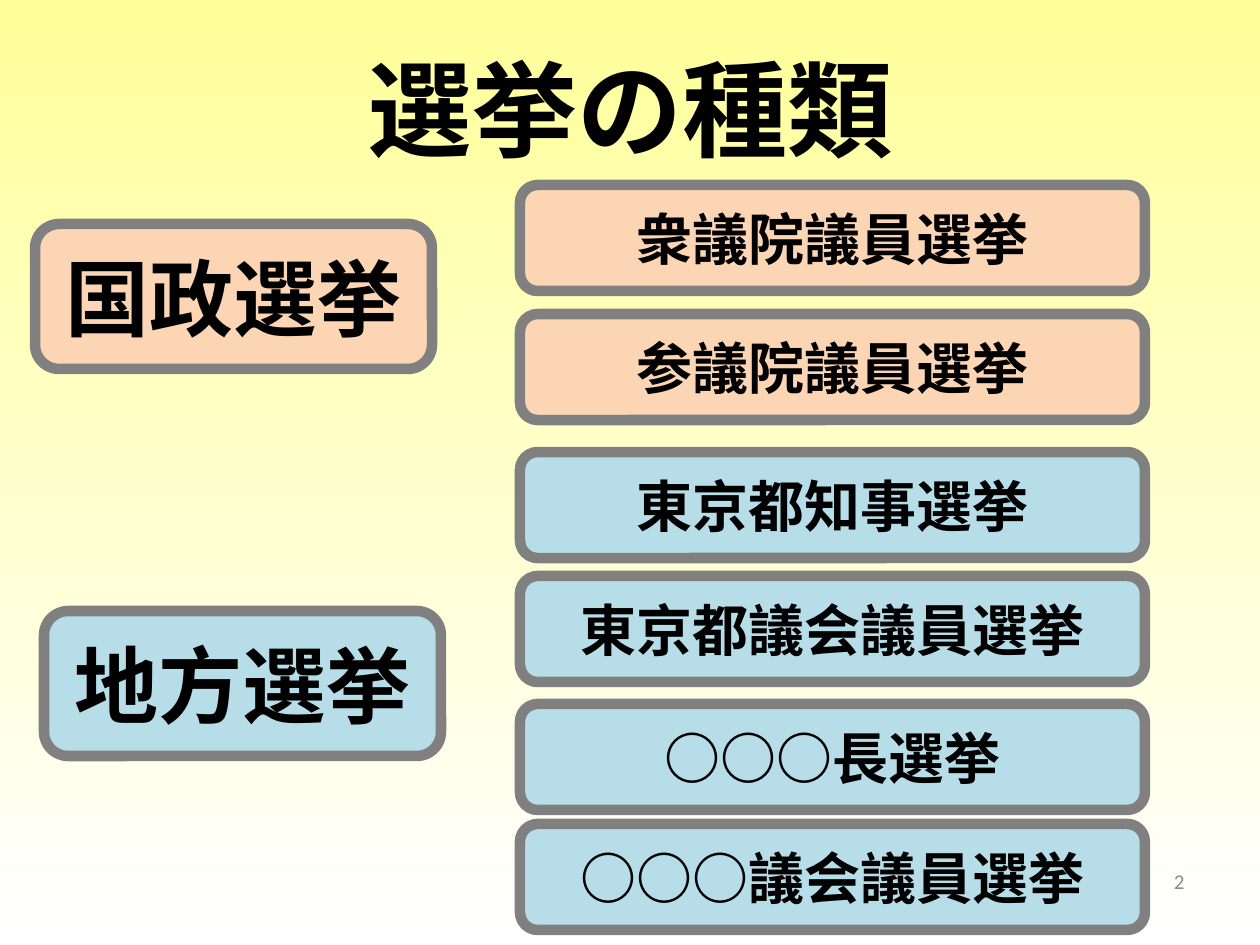
from lxml.etree import SubElement
from pptx import Presentation
from pptx.dml.color import RGBColor
from pptx.enum.shapes import MSO_SHAPE as Shape
from pptx.enum.text import MSO_ANCHOR as Anchor, MSO_AUTO_SIZE as AutoSize, PP_ALIGN as Align
from pptx.oxml.ns import qn
from pptx.util import Pt

PX = 914400 // 126
JAPANESE = "Noto Sans CJK JP"
COLORS = {
    "top": "FFFF99", "bottom": "FFFFFF", "text": "000000", "border": "808080",
    "number": "8C8C8C", "national": "FCD5B5", "local": "B7DEE8",
}

TITLE = "選挙の種類"
PAGE_NUMBER = "2"
# text, left, top, colour
GROUPS = [
    ("国政選挙", 35, 224, "national"),
    ("地方選挙", 44, 611, "local"),
]
# text, top, colour
ELECTIONS = [
    ("衆議院議員選挙", 185, "national"),
    ("参議院議員選挙", 314, "national"),
    ("東京都知事選挙", 452, "local"),
    ("東京都議会議員選挙", 576, "local"),
    ("○○○長選挙", 704, "local"),
    ("○○○議会議員選挙", 824, "local"),
]
GROUP_SIZE = (397, 145)
ELECTION_LEFT, ELECTION_SIZE = 520, (625, 106)


def color(name):
    return RGBColor.from_string(COLORS[name])


def emu(*lengths):
    return [length * PX for length in lengths]


def write(shape, text, size, font=JAPANESE, ink="text", bold=True,
          align=Align.CENTER, anchor=Anchor.MIDDLE):
    frame = shape.text_frame
    frame.word_wrap = True
    frame.auto_size = AutoSize.NONE
    frame.vertical_anchor = anchor
    para = frame.paragraphs[0]
    para.alignment = align
    span = para.add_run()
    span.text = text
    span.font.size = Pt(size)
    span.font.bold = bold
    span.font.color.rgb = color(ink)
    span.font.name = font
    SubElement(span.font._element, qn("a:ea"), typeface=font)


def add_box(page, text, left, top, extent, fill, size):
    box = page.shapes.add_shape(Shape.ROUNDED_RECTANGLE, *emu(left, top, *extent))
    box.shadow.inherit = False
    box.fill.solid()
    box.fill.fore_color.rgb = color(fill)
    box.line.color.rgb = color("border")
    box.line.width = Pt(6)
    write(box, text, size)


def paint_background(page):
    fill = page.background.fill
    fill.gradient()
    fill.gradient_angle = 270
    for stop, position, name in zip(fill.gradient_stops, (0, 1), ("top", "bottom")):
        stop.position = position
        stop.color.rgb = color(name)


def main():
    deck = Presentation()
    deck.slide_width, deck.slide_height = emu(1260, 945)
    page = deck.slides.add_slide(deck.slide_layouts[5])
    paint_background(page)

    title = page.shapes.title
    title.left, title.top, title.width, title.height = emu(63, 38, 1134, 158)
    write(title, TITLE, 60, anchor=Anchor.TOP)

    number = page.shapes.add_textbox(*emu(903, 856, 294, 50))
    write(number, PAGE_NUMBER, 12, font="Calibri", ink="number", bold=False,
          align=Align.RIGHT)

    for text, left, top, fill in GROUPS:
        add_box(page, text, left, top, GROUP_SIZE, fill, 48)
    for text, top, fill in ELECTIONS:
        add_box(page, text, ELECTION_LEFT, top, ELECTION_SIZE, fill, 32)

    deck.save("out.pptx")


if __name__ == "__main__":
    main()
